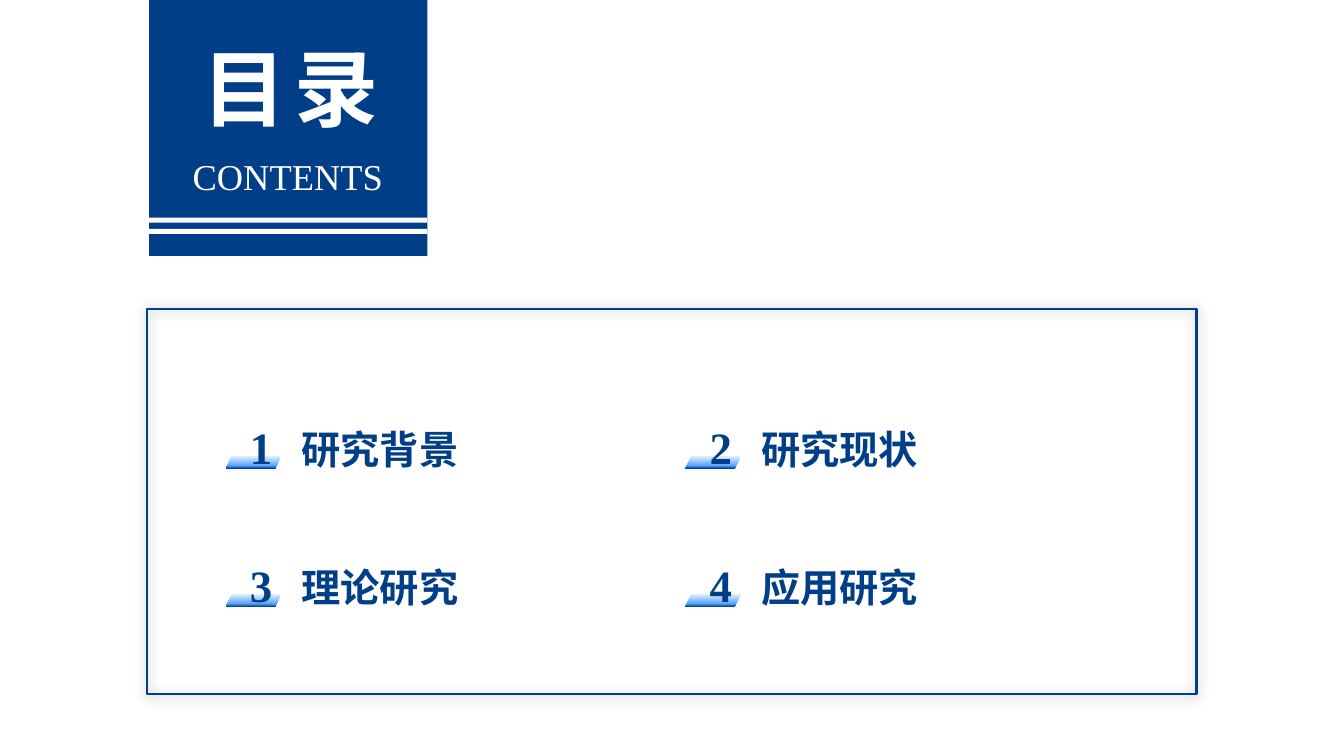
from dataclasses import dataclass
from lxml.etree import SubElement
from pptx import Presentation
from pptx.dml.color import RGBColor
from pptx.enum.shapes import MSO_SHAPE
from pptx.enum.text import MSO_ANCHOR, MSO_AUTO_SIZE, PP_ALIGN
from pptx.oxml.ns import qn
from pptx.util import Inches, Pt

SLIDE_WIDTH, SLIDE_HEIGHT = Inches(13.33), Inches(7.5)
COLUMN, ROW = SLIDE_WIDTH / 100, SLIDE_HEIGHT / 100
TOPICS = ["研究背景", "研究现状", "理论研究", "应用研究"]


@dataclass(frozen=True)
class Theme:
    blue: str = "003F88"
    white: str = "FFFFFF"
    shadow: str = "000000"
    bar_stops: tuple = ((0, "ECF5FF"), (76, "57A5FF"), (100, "003F88"), (100, "8FC3FF"))
    chinese: str = "Noto Sans CJK SC"
    latin: str = "Times New Roman"
    title_size: int = 60
    subtitle_size: int = 26
    number_size: int = 32
    label_size: int = 28


@dataclass(frozen=True)
class Box:
    left: float
    top: float
    width: float
    height: float

    def inner(self, left, top, width, height):
        return Box(self.left + left, self.top + top, width, height)

    def lengths(self):
        return (round(self.left * COLUMN), round(self.top * ROW),
                round(self.width * COLUMN), round(self.height * ROW))


THEME = Theme()


def add_block(slide, box, color=None, kind=MSO_SHAPE.RECTANGLE):
    shape = slide.shapes.add_shape(kind, *box.lengths())
    shape.shadow.inherit = False
    shape.line.fill.background()
    if color:
        shape.fill.solid()
        shape.fill.fore_color.rgb = RGBColor.from_string(color)
    else:
        shape.fill.background()
    return shape


def write(shape, text, font_name, size, color, bold=False, align=PP_ALIGN.CENTER,
          line_spacing=1.1, wrap=True):
    frame = shape.text_frame
    frame.text = text
    frame.word_wrap = wrap
    frame.auto_size = MSO_AUTO_SIZE.NONE
    frame.vertical_anchor = MSO_ANCHOR.TOP
    paragraph = frame.paragraphs[0]
    paragraph.alignment = align
    paragraph.line_spacing = line_spacing
    font = paragraph.runs[0].font
    font.name = font_name
    font.size = Pt(size)
    font.bold = bold
    font.color.rgb = RGBColor.from_string(color)
    properties = shape.element.find(".//" + qn("a:rPr"))
    SubElement(properties, qn("a:ea"), typeface=font_name)
    return properties


def add_banner(slide, box):
    add_block(slide, box, THEME.blue)

    title = slide.shapes.title
    title.left, title.top, title.width, title.height = box.inner(2.85, 2.8, 15.3, 16.13).lengths()
    properties = write(title, "目录", THEME.chinese, THEME.title_size, THEME.white,
                       bold=True, wrap=False)
    properties.set("spc", "600")
    title.element.getparent().append(title.element)

    subtitle = slide.shapes.add_textbox(*box.inner(2.48, 19.2, 15.68, 7.73).lengths())
    write(subtitle, "CONTENTS", THEME.latin, THEME.subtitle_size, THEME.white, wrap=False)

    for stripe in range(2):
        add_block(slide, box.inner(0, 28.8 + 1.47 * stripe, box.width, 0.67), THEME.white)


def add_bar(slide, box):
    bar = add_block(slide, box, kind=MSO_SHAPE.PARALLELOGRAM)
    bar.adjustments[0] = 0.49
    bar.fill.gradient()
    bar.fill.gradient_angle = 270
    stops = bar.element.spPr.find(".//" + qn("a:gsLst"))
    for stop in list(stops):
        stops.remove(stop)
    for position, color in THEME.bar_stops:
        stop = SubElement(stops, qn("a:gs"), pos=str(position * 1000))
        SubElement(stop, qn("a:srgbClr"), val=color)


def add_entry(slide, box, number, topic):
    add_bar(slide, box.inner(0, 5.47, 4.13, 1.73))
    badge = slide.shapes.add_textbox(*box.inner(0.83, 0, 3.6, 8.53).lengths())
    write(badge, str(number), THEME.latin, THEME.number_size, THEME.blue,
          bold=True, line_spacing=1.0)
    label = slide.shapes.add_textbox(*box.inner(4.9, 0.2, 16.2, 8.27).lengths())
    write(label, topic, THEME.chinese, THEME.label_size, THEME.blue,
          bold=True, align=PP_ALIGN.LEFT)


def add_frame(slide, box):
    frame = add_block(slide, box)
    frame.line.color.rgb = RGBColor.from_string(THEME.blue)
    frame.line.width = Pt(1.5)
    effects = frame.element.spPr.find(qn("a:effectLst"))
    shadow = SubElement(effects, qn("a:outerShdw"), blurRad=str(int(Pt(9))), dist="0", dir="0",
                        algn="ctr", rotWithShape="0")
    color = SubElement(shadow, qn("a:srgbClr"), val=THEME.shadow)
    SubElement(color, qn("a:alpha"), val="40000")


def add_agenda(slide, box):
    for index, topic in enumerate(TOPICS):
        row, column = divmod(index, 2)
        entry = box.inner(5.85 + 34.2 * column, 13.87 + 18.27 * row, 21.1, 8.53)
        add_entry(slide, entry, index + 1, topic)
    add_frame(slide, box)


def main():
    presentation = Presentation()
    presentation.slide_width, presentation.slide_height = SLIDE_WIDTH, SLIDE_HEIGHT
    slide = presentation.slides.add_slide(presentation.slide_layouts[5])
    add_banner(slide, Box(11.1, 0, 20.7, 33.87))
    add_agenda(slide, Box(10.95, 40.93, 78.08, 50.93))
    presentation.save("out.pptx")


if __name__ == "__main__":
    main()
